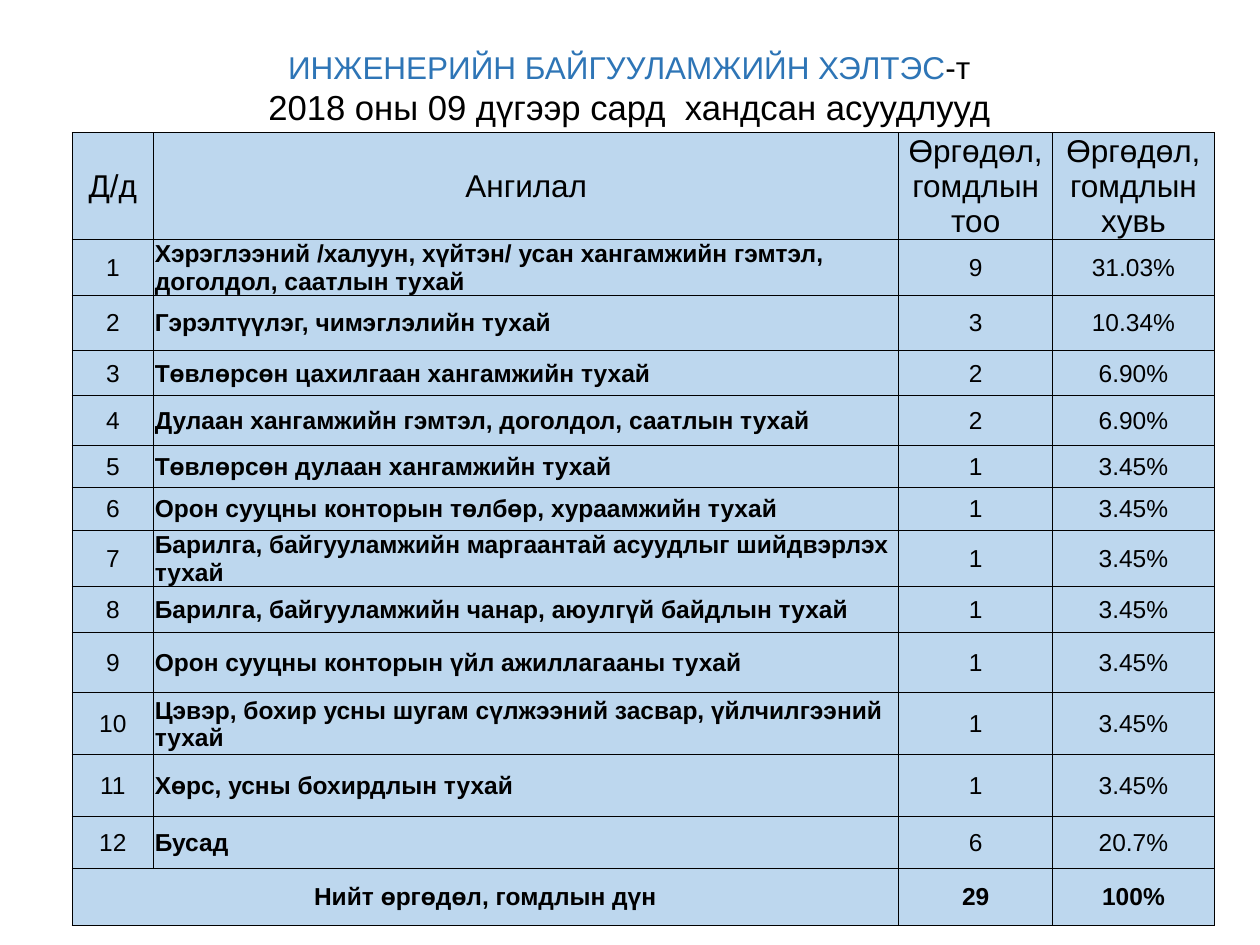
from dataclasses import dataclass

from lxml.etree import SubElement
from pptx import Presentation
from pptx.dml.color import RGBColor as Rgb
from pptx.enum.text import MSO_ANCHOR as Anchor, MSO_AUTO_SIZE as AutoSize, PP_ALIGN as Align
from pptx.oxml.ns import qn
from pptx.util import Cm, Pt


@dataclass(frozen=True)
class Theme:
    font: str = "Arial"
    ink: str = "000000"
    accent: str = "2E75B6"
    cell: str = "BDD7EE"
    title_size: float = 18
    period_size: float = 19.8
    header_size: float = 18
    body_size: float = 14
    border: float = 0.5


HEADERS = ["Д/д", "Ангилал", "Өргөдөл, гомдлын тоо", "Өргөдөл, гомдлын хувь"]
# Category, number of complaints, share, row height in cm
COMPLAINTS = [
    ("Хэрэглээний /халуун, хүйтэн/ усан хангамжийн гэмтэл, доголдол, саатлын тухай", 9, "31.03%", 1.07),
    ("Гэрэлтүүлэг, чимэглэлийн тухай", 3, "10.34%", 1.11),
    ("Төвлөрсөн цахилгаан хангамжийн тухай", 2, "6.90%", 0.91),
    ("Дулаан хангамжийн гэмтэл, доголдол, саатлын тухай", 2, "6.90%", 1),
    ("Төвлөрсөн дулаан хангамжийн тухай", 1, "3.45%", 0.85),
    ("Орон сууцны конторын төлбөр, хураамжийн тухай", 1, "3.45%", 0.87),
    ("Барилга, байгууламжийн маргаантай асуудлыг шийдвэрлэх тухай", 1, "3.45%", 1.02),
    ("Барилга, байгууламжийн чанар, аюулгүй байдлын тухай", 1, "3.45%", 0.93),
    ("Орон сууцны конторын үйл ажиллагааны тухай", 1, "3.45%", 1.21),
    ("Цэвэр, бохир усны шугам сүлжээний засвар, үйлчилгээний тухай", 1, "3.45%", 1.25),
    ("Хөрс, усны бохирдлын тухай", 1, "3.45%", 1.25),
    ("Бусад", 6, "20.7%", 1.03),
]
TOTAL = ["Нийт өргөдөл, гомдлын дүн", "", "29", "100%"]
COLUMN_WIDTHS = [1.65, 15.02, 3.1, 3.26]
HEADER_HEIGHT, TOTAL_HEIGHT = 1.6, 1.15


class SlideBuilder:
    def __init__(self, deck, theme):
        self.theme = theme
        self.slide = deck.slides.add_slide(deck.slide_layouts[5])

    def style_run(self, run, size, color, bold=False):
        run.font.name = self.theme.font
        run.font.size = Pt(size)
        run.font.bold = bold
        run.font.color.rgb = Rgb.from_string(color)

    def title(self, lines, left, top, width, height):
        """Each line is a list of (text, size, color) parts."""
        heading = self.slide.shapes.title
        heading.left, heading.top, heading.width, heading.height = map(Cm, (left, top, width, height))
        frame = heading.text_frame
        frame.auto_size = AutoSize.NONE
        frame.vertical_anchor = Anchor.MIDDLE
        for number, parts in enumerate(lines):
            paragraph = frame.add_paragraph() if number else frame.paragraphs[0]
            paragraph.alignment = Align.CENTER
            paragraph.line_spacing = 1.0
            paragraph.space_before = Pt(0)
            for text, size, color in parts:
                run = paragraph.add_run()
                run.text = text
                self.style_run(run, size, color)

    def cell(self, cell, text, size, bold=False, align=Align.CENTER):
        cell.margin_left = cell.margin_right = cell.margin_top = Cm(0.02)
        cell.margin_bottom = 0
        cell.vertical_anchor = Anchor.MIDDLE
        cell.text_frame.text = text
        paragraph = cell.text_frame.paragraphs[0]
        paragraph.alignment = align
        for run in paragraph.runs:
            self.style_run(run, size, self.theme.ink, bold)
        # Borders come before the fill in the cell properties
        properties = cell._tc.get_or_add_tcPr()
        for side in ("a:lnL", "a:lnR", "a:lnT", "a:lnB"):
            line = SubElement(properties, qn(side), w=str(Pt(self.theme.border)))
            SubElement(SubElement(line, qn("a:solidFill")), qn("a:srgbClr"), val=self.theme.ink)
        cell.fill.solid()
        cell.fill.fore_color.rgb = Rgb.from_string(self.theme.cell)

    def table(self, rows, left, top, widths, heights):
        table = self.slide.shapes.add_table(
            len(rows), len(widths), Cm(left), Cm(top), Cm(sum(widths)), Cm(sum(heights))
        ).table
        for column, width in zip(table.columns, widths):
            column.width = Cm(width)
        for row, height in zip(table.rows, heights):
            row.height = Cm(height)
        last = len(rows) - 1
        for r, values in enumerate(rows):
            size = self.theme.body_size if r else self.theme.header_size
            for c, value in enumerate(values):
                is_category = c == 1 and 0 < r < last
                self.cell(table.cell(r, c), value, size, bold=is_category or r == last,
                          align=Align.LEFT if is_category else Align.CENTER)
        table.cell(last, 0).merge(table.cell(last, 1))


def main():
    deck = Presentation()
    deck.slide_width, deck.slide_height = Cm(25.4), Cm(19.05)
    theme = Theme()
    builder = SlideBuilder(deck, theme)

    # Department and reporting period
    builder.title(
        [
            [("ИНЖЕНЕРИЙН БАЙГУУЛАМЖИЙН ХЭЛТЭС", theme.title_size, theme.accent),
             ("-т", theme.title_size, theme.ink)],
            [("2018 оны 09 дүгээр сард  хандсан асуудлууд", theme.period_size, theme.ink)],
        ],
        1.93, 0.94, 21.51, 1.65,
    )

    # Complaints by category, with the total below
    numbered = [[str(number), category, str(count), share]
                for number, (category, count, share, _) in enumerate(COMPLAINTS, 1)]
    heights = [HEADER_HEIGHT, *(entry[-1] for entry in COMPLAINTS), TOTAL_HEIGHT]
    builder.table([HEADERS, *numbered, TOTAL], 1.45, 2.67, COLUMN_WIDTHS, heights)

    deck.save("out.pptx")


if __name__ == "__main__":
    main()
